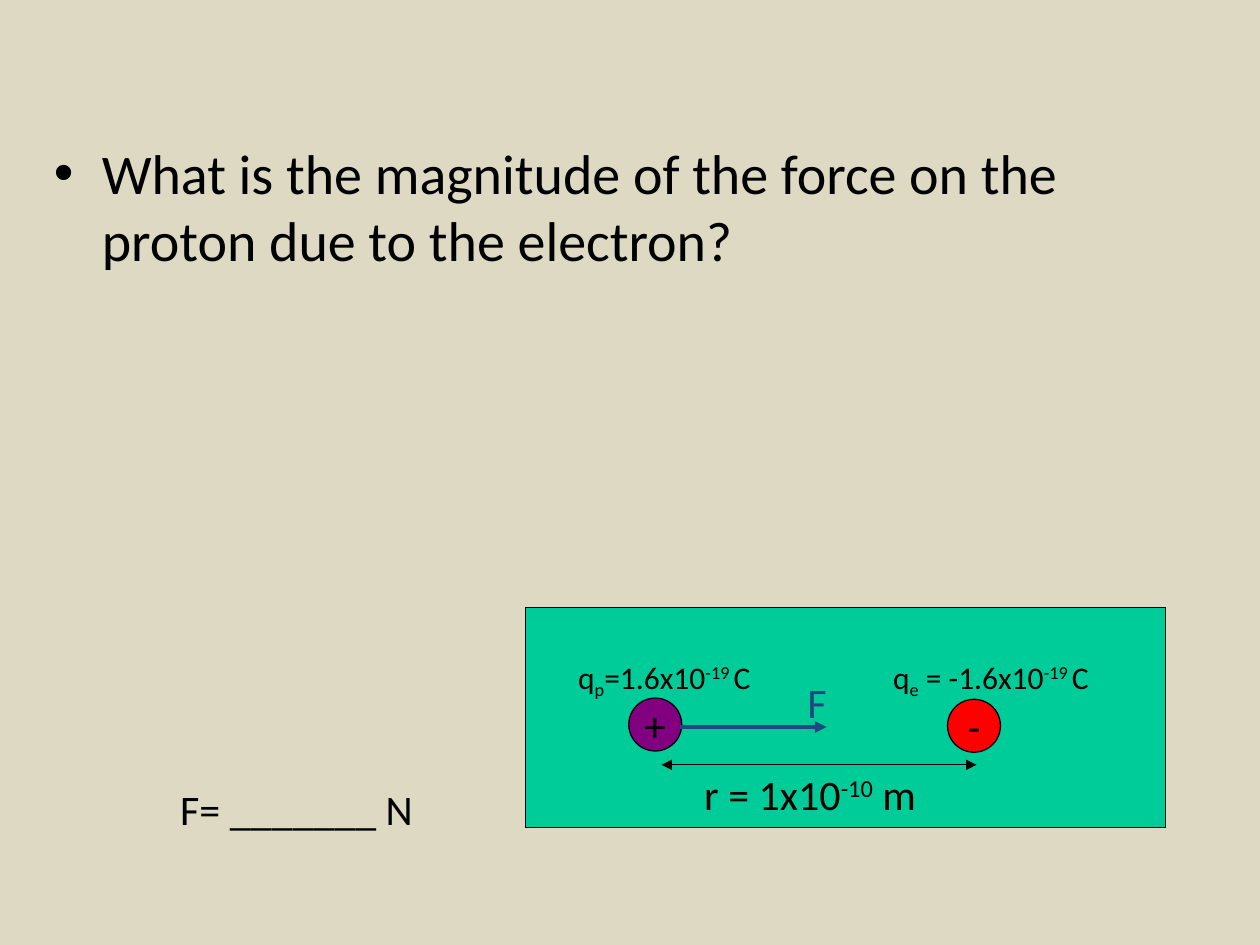
from pptx import Presentation
from pptx.dml.color import RGBColor
from pptx.enum.shapes import MSO_CONNECTOR as Connector, MSO_SHAPE as Shape
from pptx.enum.text import MSO_ANCHOR as Anchor, PP_ALIGN as Align
from pptx.oxml.ns import qn
from pptx.util import Inches, Pt
from lxml.etree import SubElement

COLORS = {
    "background": "DDD9C3",
    "panel": "00CC99",
    "proton": "800080",
    "electron": "FF0000",
    "force": "1F497D",
    "black": "000000",
}
FONT = "Calibri"
SUPER, SUB = "30000", "-25000"


def rgb(name):
    return RGBColor.from_string(COLORS[name])


def add_run(paragraph, text, size, color="black", baseline=None):
    run = paragraph.add_run()
    run.text = text
    run.font.name = FONT
    run.font.size = Pt(size)
    run.font.color.rgb = rgb(color)
    if baseline:
        run.font._element.set("baseline", baseline)


def add_label(slide, left, top, width, height, runs, size, color="black"):
    """Add a one-paragraph text box from (text, baseline) pairs."""
    label = slide.shapes.add_textbox(
        Inches(left), Inches(top), Inches(width), Inches(height))
    label.text_frame.word_wrap = True
    for text, baseline in runs:
        add_run(label.text_frame.paragraphs[0], text, size, color, baseline)
    return label


def add_filled(slide, kind, left, top, width, height, fill):
    shape = slide.shapes.add_shape(
        kind, Inches(left), Inches(top), Inches(width), Inches(height))
    shape.shadow.inherit = False
    shape.fill.solid()
    shape.fill.fore_color.rgb = rgb(fill)
    shape.line.color.rgb = rgb("black")
    shape.line.width = Pt(0.75)
    return shape


def add_charge(slide, left, top, sign, fill):
    charge = add_filled(slide, Shape.OVAL, left, top, 0.42, 0.42, fill)
    frame = charge.text_frame
    frame.word_wrap = False
    frame.vertical_anchor = Anchor.MIDDLE
    frame.paragraphs[0].alignment = Align.CENTER
    add_run(frame.paragraphs[0], sign, 24)


def add_arrow(slide, left, right, y, color, width, ends):
    arrow = slide.shapes.add_connector(
        Connector.STRAIGHT, Inches(left), Inches(y), Inches(right), Inches(y))
    arrow.line.color.rgb = rgb(color)
    arrow.line.width = Pt(width)
    for end in ends:
        SubElement(arrow.line._get_or_add_ln(), qn(f"a:{end}"), type="triangle")
    SubElement(arrow._element.spPr, qn("a:effectLst"))


def add_question(slide, left, top, width, height):
    question = add_label(
        slide, left, top, width, height,
        [("What is the magnitude of the force on the proton due to the electron?", None)], 32)
    # The text starts one line below the top of the box
    question.text_frame.margin_top = Inches(0.68)
    properties = question.text_frame.paragraphs[0]._p.get_or_add_pPr()
    properties.set("marL", str(Inches(0.38)))
    properties.set("indent", str(-Inches(0.38)))
    SubElement(properties, qn("a:buFont"), typeface="Arial")
    SubElement(properties, qn("a:buChar"), char="•")


def add_answer(slide, left, top, width, height):
    answer = add_label(slide, left, top, width, height, [("F= _______ N", None)], 24)
    answer.text_frame.margin_left = Inches(0.6)


def add_charge_diagram(slide, left, top, width, height):
    add_filled(slide, Shape.RECTANGLE, left, top, width, height, "panel")

    # Charges
    add_charge(slide, left + 0.82, top + 0.72, "+", "proton")
    add_charge(slide, left + 3.35, top + 0.73, "-", "electron")

    # Charge values
    values = [(0.32, "p", "=1.6x10"), (2.82, "e", " = -1.6x10")]
    for offset, particle, value in values:
        runs = [("q", None), (particle, SUB), (value, None), ("-19 ", SUPER), ("C", None)]
        add_label(slide, left + offset, top + 0.35, 2.5, 0.4, runs, 18)

    # Distance
    add_arrow(slide, left + 1.08, left + 3.58, top + 1.25, "black", 0.75,
              ["headEnd", "tailEnd"])
    add_label(slide, left + 1.32, top + 1.23, 2.25, 0.5,
              [("r = 1x10", None), ("-10", SUPER), (" m", None)], 24)

    # Force on the proton
    add_arrow(slide, left + 1.23, left + 2.39, top + 0.95, "force", 2.25, ["tailEnd"])
    add_label(slide, left + 2.14, top + 0.5, 0.5, 0.5, [("F", None)], 24, "force")


def main():
    presentation = Presentation()
    presentation.slide_width = Inches(10)
    presentation.slide_height = Inches(7.5)
    slide = presentation.slides.add_slide(presentation.slide_layouts[6])
    slide.background.fill.solid()
    slide.background.fill.fore_color.rgb = rgb("background")

    add_question(slide, 0.33, 0.42, 9.33, 6.67)
    add_charge_diagram(slide, 4.17, 4.82, 5.08, 1.75)
    add_answer(slide, 0.83, 6.17, 2.65, 0.5)
    presentation.save("out.pptx")


if __name__ == "__main__":
    main()
